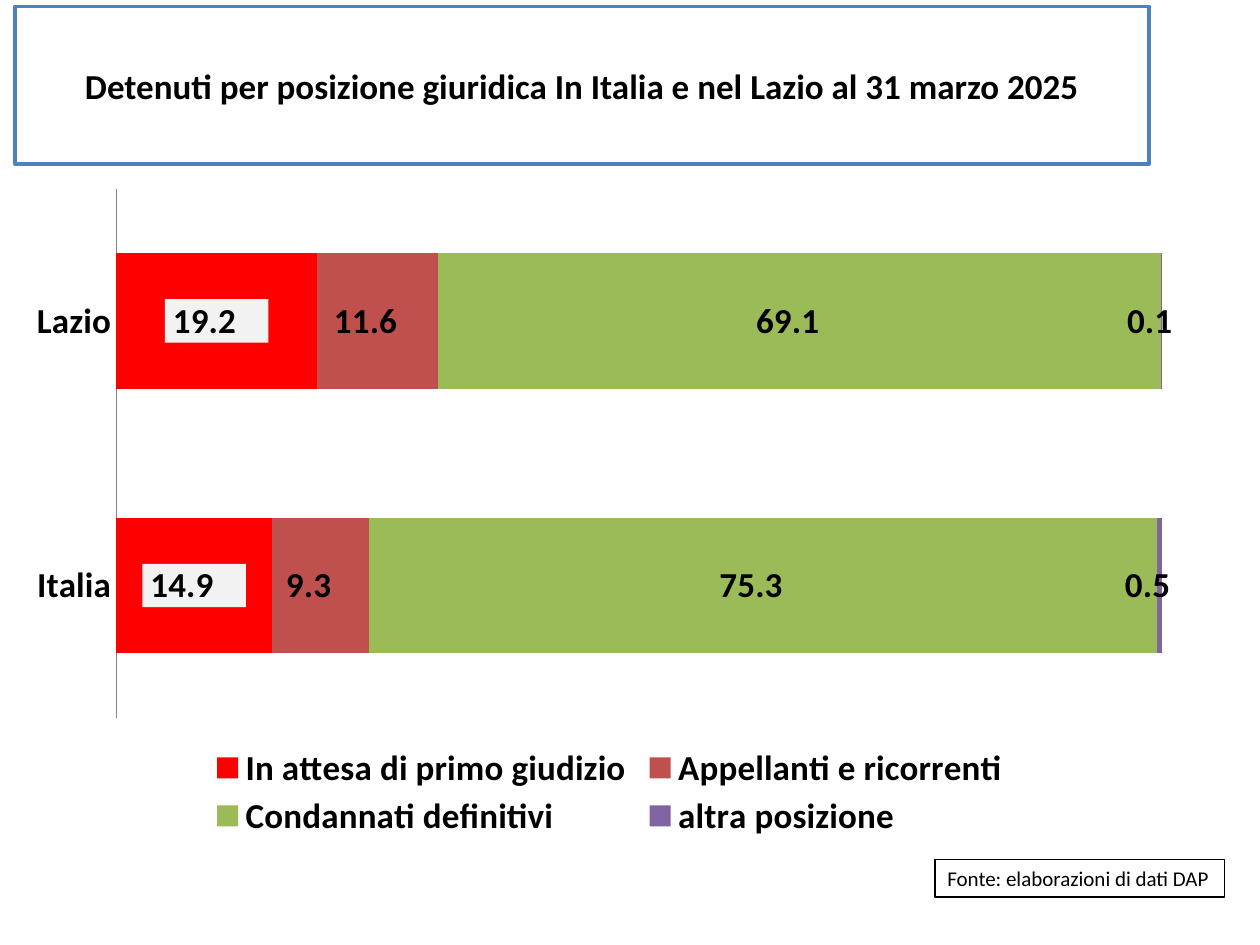
from dataclasses import dataclass

from pptx import Presentation
from pptx.chart.data import CategoryChartData
from pptx.dml.color import RGBColor
from pptx.enum.chart import XL_CHART_TYPE, XL_LEGEND_POSITION, XL_TICK_LABEL_POSITION, XL_TICK_MARK
from pptx.enum.shapes import MSO_SHAPE
from pptx.enum.text import MSO_ANCHOR, PP_ALIGN
from pptx.oxml import parse_xml
from pptx.oxml.ns import nsdecls, qn
from pptx.util import Inches, Pt


@dataclass(frozen=True)
class Theme:
    """Colours, font and type sizes of the slide."""
    font: str = "Calibri"
    text: str = "000000"
    paper: str = "FFFFFF"
    frame: str = "4F81BD"
    axis: str = "868686"
    label: str = "F2F2F2"
    large: int = 20
    small: int = 12


THEME = Theme()
NUMBER_FORMAT = r"_-* #,##0.0\ _€_-;\-* #,##0.0\ _€_-;_-* "
REGIONS = ("Lazio", "Italia")
POSITIONS = (
    ("In attesa di primo giudizio", (19.2, 14.9), "FF0000"),
    ("Appellanti e ricorrenti", (11.6, 9.3), "C0504D"),
    ("Condannati definitivi", (69.1, 75.3), "9BBB59"),
    ("altra posizione", (0.1, 0.5), "8064A2"),
)


def format_font(font, size, bold=False):
    """Apply the theme's typeface and text colour to a font."""
    font.name = THEME.font
    font.size = Pt(size)
    font.bold = bold
    font.color.rgb = RGBColor.from_string(THEME.text)


def add_framed_text(slide, box, text, *, size, line, width, bold=False,
                    align=PP_ALIGN.LEFT, wrap=True):
    """Add a white outlined rectangle holding one paragraph."""
    shape = slide.shapes.add_shape(MSO_SHAPE.RECTANGLE, *map(Inches, box))
    shape.shadow.inherit = False
    shape.fill.solid()
    shape.fill.fore_color.rgb = RGBColor.from_string(THEME.paper)
    shape.line.color.rgb = RGBColor.from_string(line)
    shape.line.width = Pt(width)
    frame = shape.text_frame
    frame.word_wrap = wrap
    frame.vertical_anchor = MSO_ANCHOR.MIDDLE
    paragraph = frame.paragraphs[0]
    paragraph.alignment = align
    run = paragraph.add_run()
    run.text = text
    format_font(run.font, size, bold)


def set_layout(element, index, box, inner=False):
    """Place a chart part by fractions of the chart's width and height."""
    for layout in element.findall(qn("c:layout")):
        element.remove(layout)
    target = '<c:layoutTarget val="inner"/>' if inner else ""
    modes = '<c:xMode val="edge"/><c:yMode val="edge"/>'
    sizes = "".join(f'<c:{name} val="{value}"/>' for name, value in zip("xywh", box))
    element.insert(index, parse_xml(
        f'<c:layout {nsdecls("c")}><c:manualLayout>{target}{modes}{sizes}'
        "</c:manualLayout></c:layout>"))


def format_axes(chart):
    """Show only the category names and their axis line."""
    category_axis = chart.category_axis
    category_axis.reverse_order = True
    category_axis.major_tick_mark = XL_TICK_MARK.NONE
    category_axis.minor_tick_mark = XL_TICK_MARK.NONE
    category_axis.tick_label_position = XL_TICK_LABEL_POSITION.NEXT_TO_AXIS
    category_axis.format.line.color.rgb = RGBColor.from_string(THEME.axis)
    category_axis.format.line.width = Pt(0.75)
    value_axis = chart.value_axis
    value_axis.has_major_gridlines = False
    value_axis.minimum_scale = 0
    value_axis.maximum_scale = 1
    value_axis.visible = False


def format_series(series, color):
    """Colour one series and show its values."""
    series.format.fill.solid()
    series.format.fill.fore_color.rgb = RGBColor.from_string(color)
    labels = series.data_labels
    labels.show_value = True
    labels.number_format = NUMBER_FORMAT
    labels.number_format_is_linked = False
    format_font(labels.font, THEME.large, True)
    return labels


def fill_labels(labels, color):
    """Give data labels a solid background."""
    labels._element.find(qn("c:numFmt")).addnext(parse_xml(
        f'<c:spPr {nsdecls("c", "a")}><a:solidFill><a:srgbClr val="{color}"/>'
        "</a:solidFill></c:spPr>"))


def add_position_chart(slide, box):
    """Add the stacked bars of legal positions by region."""
    data = CategoryChartData(number_format=NUMBER_FORMAT)
    data.categories = REGIONS
    for name, values, _ in POSITIONS:
        data.add_series(name, values)
    chart = slide.shapes.add_chart(
        XL_CHART_TYPE.BAR_STACKED_100, *map(Inches, box), data).chart
    chart.has_title = False
    format_font(chart.font, THEME.large, True)
    plot = chart.plots[0]
    plot.gap_width = 95
    plot.overlap = 100
    plot.vary_by_categories = False
    labels = [format_series(series, color)
              for series, (_, _, color) in zip(plot.series, POSITIONS)]
    fill_labels(labels[0], THEME.label)
    format_axes(chart)
    chart.has_legend = True
    legend = chart.legend
    legend.position = XL_LEGEND_POSITION.BOTTOM
    legend.include_in_layout = False
    format_font(legend.font, THEME.large, True)
    plot_area = chart._chartSpace.find(f'{qn("c:chart")}/{qn("c:plotArea")}')
    set_layout(plot_area, 0, (0.085, 0.02, 0.88, 0.785), inner=True)
    set_layout(legend._element, 1, (0.16, 0.84, 0.68, 0.15))


def build_slide(presentation):
    """Compose the title, chart and source note on a blank slide."""
    slide = presentation.slides.add_slide(presentation.slide_layouts[6])
    add_framed_text(
        slide, (0.12, 0.05, 9, 1.25),
        "Detenuti per posizione giuridica In Italia e nel Lazio al 31 marzo 2025",
        size=THEME.large, line=THEME.frame, width=2, bold=True, align=PP_ALIGN.CENTER)
    add_framed_text(
        slide, (7.42, 6.82, 2.3, 0.3), "Fonte: elaborazioni di dati DAP",
        size=THEME.small, line=THEME.text, width=0.75, wrap=False)
    add_position_chart(slide, (0.12, 1.39, 9.44, 5.35))


def main():
    """Build and save the presentation."""
    presentation = Presentation()
    presentation.slide_width = Inches(10)
    presentation.slide_height = Inches(7.5)
    build_slide(presentation)
    presentation.save("out.pptx")


if __name__ == "__main__":
    main()
